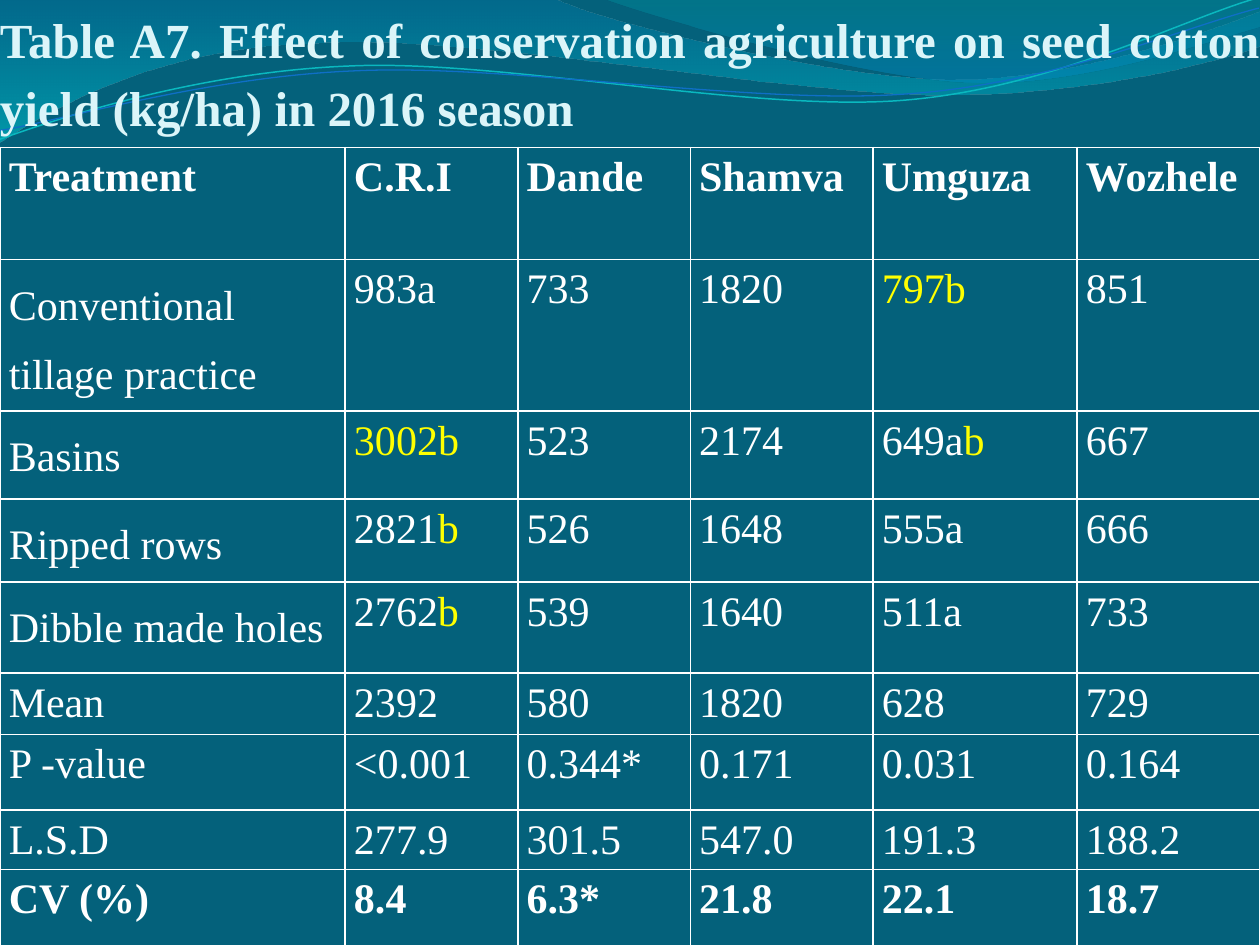
from dataclasses import dataclass

import lxml.etree
import pptx
import pptx.dml.color
import pptx.enum.text
import pptx.oxml.ns
import pptx.util

EMU_PER_PX = 9144  # 100 px to the inch


@dataclass(frozen=True)
class Theme:
    font: str = "Times New Roman"
    background: str = "04617B"
    title: str = "DBF5F9"
    text: str = "FFFFFF"
    highlight: str = "FFFF00"
    border: str = "FFFFFF"
    title_size: int = 28
    table_size: int = 24
    border_width: int = 1


@dataclass(frozen=True)
class Stop:
    position: float
    color: str
    opacity: int


@dataclass(frozen=True)
class Wave:
    """Segments hold two numbers for a line, six for a Bezier curve."""
    start: tuple[int, int]
    segments: tuple[tuple[int, ...], ...]
    stops: tuple[Stop, ...] = ()
    line_color: str = ""
    line_width: float = 0
    rotation: float = 0


@dataclass(frozen=True)
class Row:
    """A bar in a value starts its highlighted part."""
    height: int
    label: str
    values: tuple[str, ...]
    bold: bool = False
    label_spacing: float = 1.15


THEME = Theme()
TITLE = ("Table A7. Effect of conservation agriculture on seed cotton "
         "yield (kg/ha) in 2016 season")
TABLE_HEIGHT = 637
COLUMN_WIDTHS = (274, 137, 137, 145, 162, 145)
ROWS = (
    Row(89, "Treatment", ("C.R.I", "Dande", "Shamva", "Umguza", "Wozhele"), bold=True),
    Row(117, "Conventional tillage practice", ("983a", "733", "1820", "|797b", "851"),
        label_spacing=1.5),
    Row(70, "Basins", ("|3002b", "523", "2174", "649a|b", "667"), label_spacing=1.5),
    Row(66, "Ripped rows ", ("2821|b", "526", "1648", "555a", "666"), label_spacing=1.5),
    Row(72, "Dibble made holes", ("2762|b", "539", "1640", "511a", "733"),
        label_spacing=1.5),
    Row(49, "Mean", ("2392", "580", "1820", "628", "729")),
    Row(60, "P -value", ("<0.001", "0.344*", "0.171", "0.031", "0.164")),
    Row(47, "L.S.D", ("277.9", "301.5", "547.0", "191.3", "188.2")),
    Row(64, "CV (%)", ("8.4", "6.3*", "21.8", "22.1", "18.7"), bold=True),
)
WAVES = (
    Wave((0, 0), ((440, -1), (476, 17, 664, 63, 758, 63), (853, 63, 958, 26, 1000, 9),
                  (1001, 36), (983, 44, 870, 76, 746, 75), (622, 75, 382, 28, 257, 34),
                  (129, 36, 46, 83, -1, 113), (0, 0)),
         stops=(Stop(0, "0074A1", 45), Stop(1, "00C6CF", 55))),
    Wave((479, -1), ((509, 11, 682, 62, 769, 65), (856, 69, 961, 32, 1000, 21),
                     (1000, 0), (479, -1)),
         stops=(Stop(0, "00A1A9", 30), Stop(0.8, "008BBF", 45))),
    Wave((-2, 87), ((47, 72, 158, 41, 278, 42), (396, 42, 591, 93, 712, 90),
                    (832, 87, 940, 36, 1000, 22)),
         line_color="0AB8BF", line_width=0.85, rotation=357.3),
    Wave((-2, 80), ((46, 75, 164, 45, 283, 46), (403, 46, 596, 88, 716, 85),
                    (835, 83, 942, 42, 1001, 30)),
         line_color="0F6FC6", line_width=0.75, rotation=357.3),
)


def px(n: float) -> pptx.util.Emu:
    return pptx.util.Emu(round(n * EMU_PER_PX))


def rgb(color: str) -> pptx.dml.color.RGBColor:
    return pptx.dml.color.RGBColor.from_string(color)


def sub(parent, tag: str, **attrs: str):
    """Append a DrawingML child element."""
    return lxml.etree.SubElement(parent, pptx.oxml.ns.qn(tag), attrs)


def bend(sp, wave: Wave) -> None:
    """Join the straight steps through each curve's control points into one Bezier."""
    steps = iter(list(sp._element.iter(pptx.oxml.ns.qn("a:lnTo"))))
    for seg in wave.segments:
        first = next(steps)
        if len(seg) == 6:
            first.tag = pptx.oxml.ns.qn("a:cubicBezTo")
            for _ in range(2):
                step = next(steps)
                first.append(step[0])
                step.getparent().remove(step)


def draw_wave(s, wave: Wave) -> None:
    builder = s.shapes.build_freeform(*wave.start, scale=float(EMU_PER_PX))
    points = [seg[i:i + 2] for seg in wave.segments for i in range(0, len(seg), 2)]
    builder.add_line_segments(points, close=bool(wave.stops))
    sp = builder.convert_to_shape()
    bend(sp, wave)
    sp.rotation = wave.rotation
    sp.shadow.inherit = False
    if not wave.stops:
        sp.fill.background()
        sp.line.color.rgb = rgb(wave.line_color)
        sp.line.width = pptx.util.Pt(wave.line_width)
        return
    sp.line.fill.background()
    sp.fill.gradient()
    sp.fill.gradient_angle = 270
    for gs, stop in zip(sp.fill.gradient_stops, wave.stops):
        gs.position = stop.position
        gs.color.rgb = rgb(stop.color)
    colors = sp._element.spPr.iter(pptx.oxml.ns.qn("a:srgbClr"))
    for color, stop in zip(colors, wave.stops):
        sub(color, "a:alpha", val=str(stop.opacity * 1000))


def add_run(p, text: str, size: int, color: str, bold: bool) -> None:
    r = p.add_run()
    r.text = text
    r.font.name = THEME.font
    r.font.size = pptx.util.Pt(size)
    r.font.bold = bold
    r.font.color.rgb = rgb(color)


def draw_title(s) -> None:
    tf = s.shapes.add_textbox(px(0), px(0), px(1000), px(108)).text_frame
    tf.word_wrap = True
    tf.vertical_anchor = pptx.enum.text.MSO_ANCHOR.BOTTOM
    tf.margin_left = tf.margin_right = tf.margin_bottom = 0
    tf.margin_top = px(5)
    p = tf.paragraphs[0]
    p.alignment = pptx.enum.text.PP_ALIGN.JUSTIFY
    p.line_spacing = 1.15
    add_run(p, TITLE, THEME.title_size, THEME.title, True)


def set_borders(cell) -> None:
    tc_pr = cell._tc.get_or_add_tcPr()
    width = str(pptx.util.Pt(THEME.border_width))
    for i, side in enumerate(("a:lnL", "a:lnR", "a:lnT", "a:lnB")):
        ln = sub(tc_pr, side, w=width)
        sub(sub(ln, "a:solidFill"), "a:srgbClr", val=THEME.border)
        tc_pr.insert(i, ln)


def fill_cell(cell, text: str, bold: bool, spacing: float, space_after: int) -> None:
    cell.fill.background()
    set_borders(cell)
    cell.margin_left = cell.margin_right = px(7)
    cell.margin_top = cell.margin_bottom = 0
    p = cell.text_frame.paragraphs[0]
    p.alignment = pptx.enum.text.PP_ALIGN.JUSTIFY
    p.line_spacing = spacing
    p.space_after = pptx.util.Pt(space_after)
    plain, _, marked = text.partition("|")
    for part, color in ((plain, THEME.text), (marked, THEME.highlight)):
        if part:
            add_run(p, part, THEME.table_size, color, bold)


def draw_table(s) -> None:
    frame = s.shapes.add_table(len(ROWS), len(COLUMN_WIDTHS), px(0), px(117),
                               px(sum(COLUMN_WIDTHS)), px(TABLE_HEIGHT))
    table = frame.table
    table.first_row = table.horz_banding = False
    for column, width in zip(table.columns, COLUMN_WIDTHS):
        column.width = px(width)
    for i, row in enumerate(ROWS):
        table.rows[i].height = px(row.height)
        for j, text in enumerate((row.label, *row.values)):
            spacing = row.label_spacing if j == 0 else 1.15
            tight = spacing > 1.15 or (i == 0 and j > 0)
            fill_cell(table.cell(i, j), text, row.bold, spacing, 0 if tight else 6)
    frame.height = px(TABLE_HEIGHT)


def main() -> None:
    prs = pptx.Presentation()
    prs.slide_width, prs.slide_height = px(1000), px(750)
    s = prs.slides.add_slide(prs.slide_layouts[6])
    s.background.fill.solid()
    s.background.fill.fore_color.rgb = rgb(THEME.background)
    for wave in WAVES:
        draw_wave(s, wave)
    draw_title(s)
    draw_table(s)
    prs.save("out.pptx")


if __name__ == "__main__":
    main()
